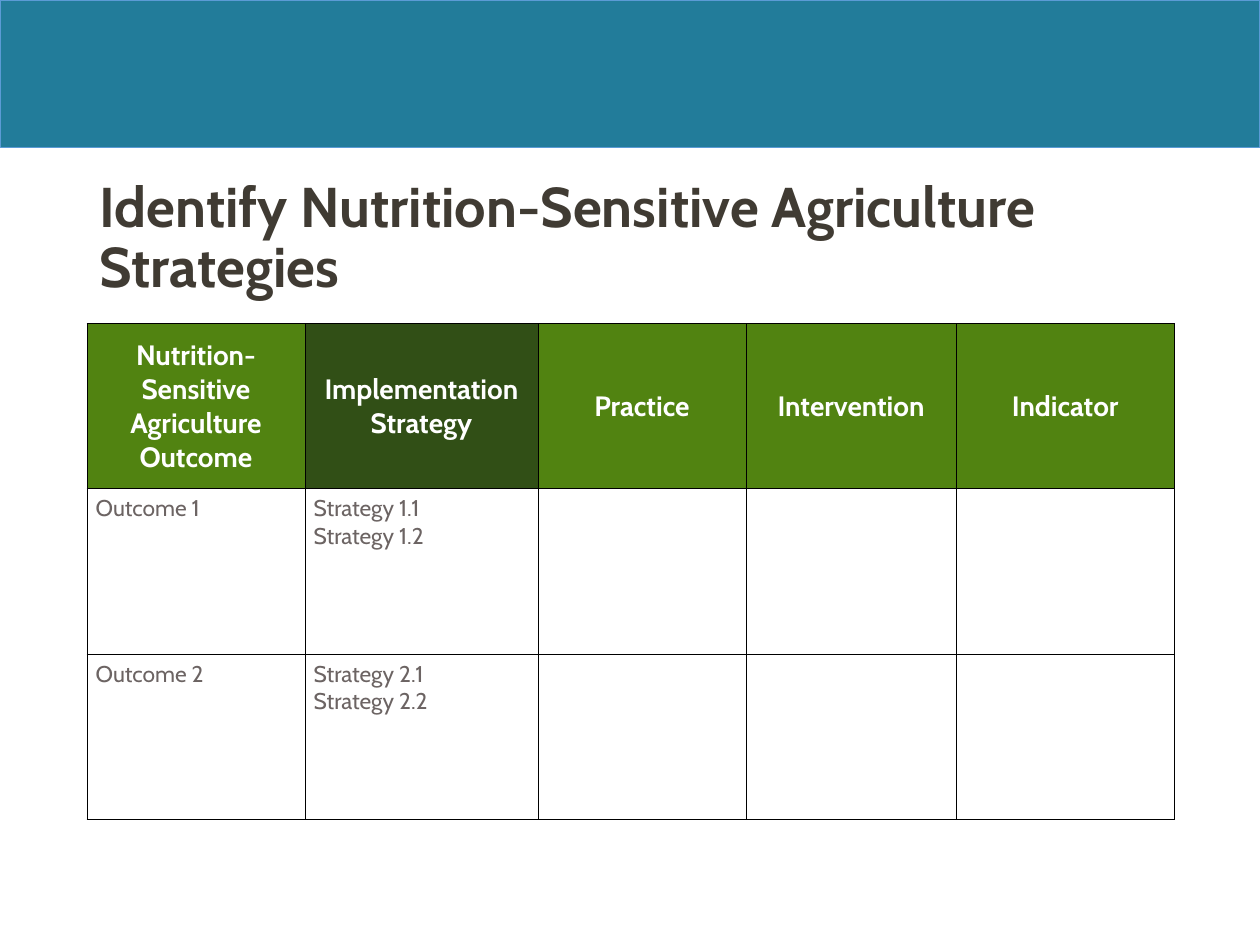
"""Build a slide with a planning table for nutrition-sensitive agriculture."""
from lxml import etree
from pptx import Presentation
from pptx.dml.color import RGBColor
from pptx.enum.shapes import MSO_SHAPE
from pptx.enum.text import MSO_ANCHOR, PP_ALIGN
from pptx.oxml.ns import qn
from pptx.util import Inches, Pt

RECT = MSO_SHAPE.RECTANGLE
TOP, MIDDLE = MSO_ANCHOR.TOP, MSO_ANCHOR.MIDDLE
LEFT, CENTER = PP_ALIGN.LEFT, PP_ALIGN.CENTER
TEAL = RGBColor(0x22, 0x7C, 0x9A)
BLUE = RGBColor(0x5B, 0x9B, 0xD5)
GREEN = RGBColor(0x51, 0x83, 0x11)
DARK = RGBColor(0x31, 0x4F, 0x16)
BROWN = RGBColor(0x40, 0x3B, 0x33)
GRAY = RGBColor(0x6C, 0x64, 0x63)
WHITE = RGBColor(0xFF, 0xFF, 0xFF)
BLACK = RGBColor(0, 0, 0)
FONT = "Cabin"


def add_run(para, text, size, color, bold):
    run = para.add_run()
    run.text = text
    run.font.name = FONT
    run.font.size = Pt(size)
    run.font.bold = bold
    run.font.color.rgb = color


def add_edges(cell):
    props = cell._tc.get_or_add_tcPr()
    for at, side in enumerate(("a:lnL", "a:lnR", "a:lnT", "a:lnB")):
        line = etree.Element(qn(side), w=str(Pt(0.5)))
        fill = etree.SubElement(line, qn("a:solidFill"))
        etree.SubElement(fill, qn("a:srgbClr"), val=str(BLACK))
        props.insert(at, line)


prs = Presentation()
prs.slide_width, prs.slide_height = Inches(10), Inches(7.5)
slide = prs.slides.add_slide(prs.slide_layouts[5])
left, wide = Inches(0.69), Inches(8.62)

band = slide.shapes.add_shape(RECT, 0, 0, prs.slide_width, Inches(1.17))
band.shadow.inherit = False
band.fill.solid()
band.fill.fore_color.rgb = TEAL
band.line.color.rgb = BLUE
band.line.width = Pt(0.5)

title = slide.shapes.title
title.left, title.top = left, Inches(1.37)
title.width, title.height = wide, Inches(1.2)
frame = title.text_frame
frame.word_wrap = True
frame.vertical_anchor = TOP
para = frame.paragraphs[0]
para.alignment = LEFT
para.line_spacing = 0.9
add_run(para, "Identify Nutrition-Sensitive Agriculture Strategies", 32, BROWN, True)

heads = ["Nutrition-Sensitive Agriculture Outcome", "Implementation Strategy",
         "Practice", "Intervention", "Indicator"]
rows = [[[head] for head in heads]]
for num in (1, 2):
    goals = [f"Strategy {num}.{part}" for part in (1, 2)]
    rows.append([[f"Outcome {num}"], goals, [], [], []])

widths = [1.73, 1.85, 1.65, 1.67, 1.73]
high = Inches(1.31)
table = slide.shapes.add_table(
    len(rows), len(heads), left, Inches(2.57), wide, high * len(rows)).table
table.horz_banding = False
for col, width in zip(table.columns, widths):
    col.width = Inches(width)

for r, row in enumerate(rows):
    table.rows[r].height = high
    for c, lines in enumerate(row):
        cell = table.cell(r, c)
        cell.margin_left = cell.margin_right = Inches(0.07)
        cell.margin_top = cell.margin_bottom = Inches(0.05)
        cell.vertical_anchor = TOP if r else MIDDLE
        if r:
            cell.fill.background()
        else:
            cell.fill.solid()
            cell.fill.fore_color.rgb = DARK if c == 1 else GREEN
        add_edges(cell)
        frame = cell.text_frame
        for n, line in enumerate(lines):
            para = frame.add_paragraph() if n else frame.paragraphs[0]
            if r:
                add_run(para, line, 13, GRAY, False)
            else:
                para.alignment = CENTER
                para.space_after = Pt(10)
                add_run(para, line, 16, WHITE, True)

prs.save("out.pptx")
